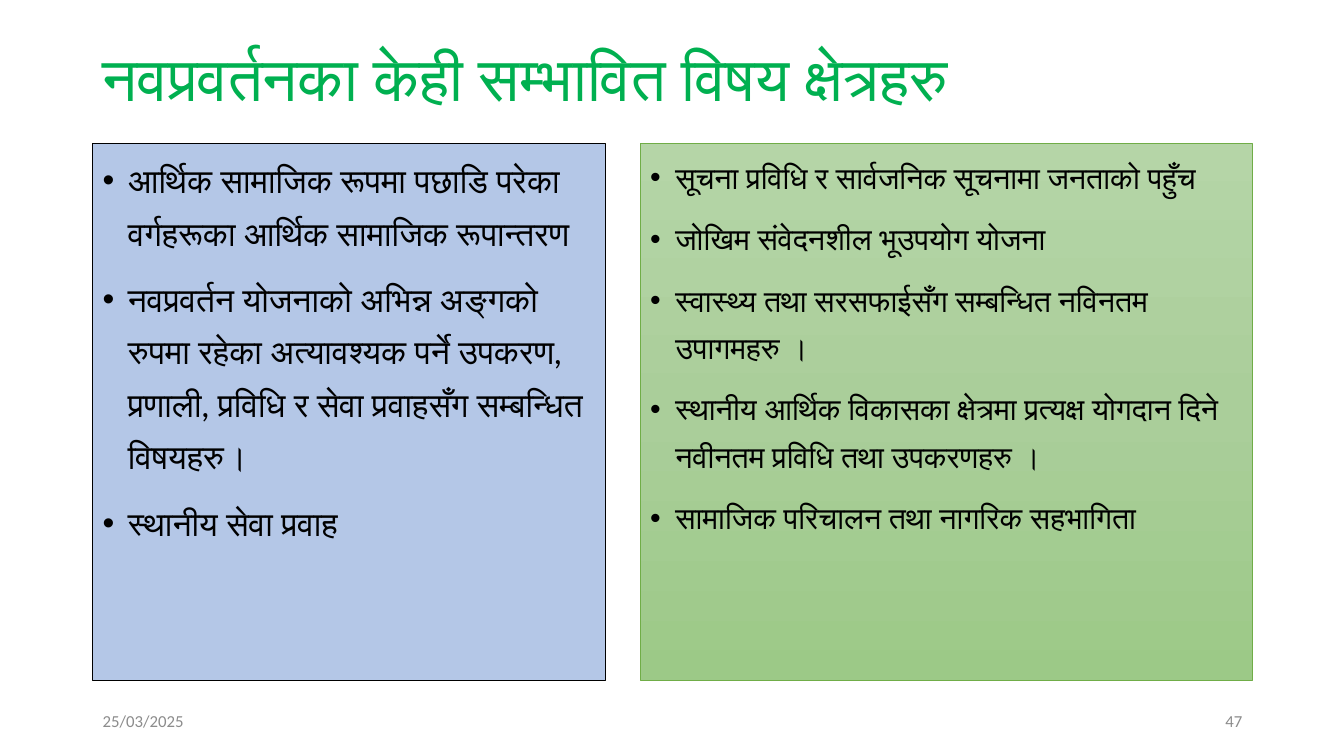
"""Builds the slide on possible subject areas for innovation."""
from copy import deepcopy

from lxml import etree
from pptx import Presentation
from pptx.dml.color import RGBColor
from pptx.enum.shapes import MSO_SHAPE
from pptx.enum.text import MSO_ANCHOR, MSO_AUTO_SIZE, PP_ALIGN
from pptx.oxml.ns import qn
from pptx.util import Inches, Pt

COLORS = {
    "title": "00B050",
    "text": "000000",
    "footer": "8C8C8C",
    "blue": "B4C7E7",
    "green_line": "70AD47",
}
GREEN_STOPS = [(0, "B5D5A7"), (0.5, "AACE9A"), (1, "9CC987")]
LEFT_TOPICS = [
    "आर्थिक सामाजिक रूपमा पछाडि परेका वर्गहरूका आर्थिक सामाजिक रूपान्तरण",
    "नवप्रवर्तन योजनाको अभिन्न अङ्गको रुपमा रहेका अत्यावश्यक पर्ने उपकरण, "
    "प्रणाली, प्रविधि र सेवा प्रवाहसँग सम्बन्धित विषयहरु।",
    "स्थानीय सेवा प्रवाह",
]
RIGHT_TOPICS = [
    "सूचना प्रविधि र सार्वजनिक सूचनामा जनताको पहुँच",
    "जोखिम संवेदनशील भूउपयोग योजना",
    "स्वास्थ्य तथा सरसफाईसँग सम्बन्धित नविनतम उपागमहरु ।",
    "स्थानीय आर्थिक विकासका क्षेत्रमा प्रत्यक्ष योगदान दिने नवीनतम प्रविधि तथा उपकरणहरु ।",
    "सामाजिक परिचालन तथा नागरिक सहभागिता",
]


def add_text(paragraph, text, size, font, color, align=PP_ALIGN.LEFT):
    """Adds one formatted run to a paragraph."""
    paragraph.alignment = align
    run = paragraph.add_run()
    run.text = text
    run.font.size = Pt(size)
    run.font.name = font
    run.font.color.rgb = RGBColor.from_string(color)


def add_panel(slide, left, width, topics, size, line_color):
    """Adds an outlined panel with a bulleted list and returns it."""
    panel = slide.shapes.add_shape(
        MSO_SHAPE.RECTANGLE, Inches(left), Inches(1.42), Inches(width), Inches(5.33))
    panel.shadow.inherit = False
    panel.line.color.rgb = RGBColor.from_string(line_color)
    panel.line.width = Pt(0.5)
    frame = panel.text_frame
    frame.word_wrap = True
    frame.vertical_anchor = MSO_ANCHOR.TOP
    for index, topic in enumerate(topics):
        paragraph = frame.add_paragraph() if index else frame.paragraphs[0]
        paragraph.line_spacing = 1.3
        paragraph.space_before = Pt(10 if index else 0)
        properties = paragraph._p.get_or_add_pPr()
        properties.set("marL", str(Inches(0.25)))
        properties.set("indent", str(Inches(-0.25)))
        etree.SubElement(properties, qn("a:buFont"), typeface="Arial")
        etree.SubElement(properties, qn("a:buChar"), char="•")
        add_text(paragraph, topic, size, "Lato", COLORS["text"])
    return panel


presentation = Presentation()
presentation.slide_width = Inches(13.33)
presentation.slide_height = Inches(7.5)
slide = presentation.slides.add_slide(presentation.slide_layouts[5])

title = slide.shapes.title
title.left, title.top = Inches(0.92), Inches(0.4)
title.width, title.height = Inches(11.5), Inches(0.81)
title.text_frame.auto_size = MSO_AUTO_SIZE.NONE
title.text_frame.vertical_anchor = MSO_ANCHOR.MIDDLE
heading = title.text_frame.paragraphs[0]
heading.line_spacing = 0.9
add_text(heading, "नवप्रवर्तनका केही सम्भावित विषय क्षेत्रहरु", 44, "Lato", COLORS["title"])

left_panel = add_panel(slide, 0.92, 5.08, LEFT_TOPICS, 24, COLORS["text"])
left_panel.fill.solid()
left_panel.fill.fore_color.rgb = RGBColor.from_string(COLORS["blue"])

right_panel = add_panel(slide, 6.35, 6.07, RIGHT_TOPICS, 21.7, COLORS["green_line"])
right_panel.fill.gradient()
right_panel.fill.gradient_angle = 270
stop_list = right_panel._element.spPr.find(qn("a:gradFill")).find(qn("a:gsLst"))
stop_list.insert(1, deepcopy(stop_list[0]))
for stop, (position, color) in zip(right_panel.fill.gradient_stops, GREEN_STOPS):
    stop.position = position
    stop.color.rgb = RGBColor.from_string(color)

for left, text, align in [(0.92, "25/03/2025", PP_ALIGN.LEFT), (9.42, "47", PP_ALIGN.RIGHT)]:
    footer = slide.shapes.add_textbox(Inches(left), Inches(6.95), Inches(3), Inches(0.4))
    footer.text_frame.word_wrap = True
    footer.text_frame.vertical_anchor = MSO_ANCHOR.MIDDLE
    add_text(footer.text_frame.paragraphs[0], text, 12, "Calibri", COLORS["footer"], align)

presentation.save("out.pptx")
